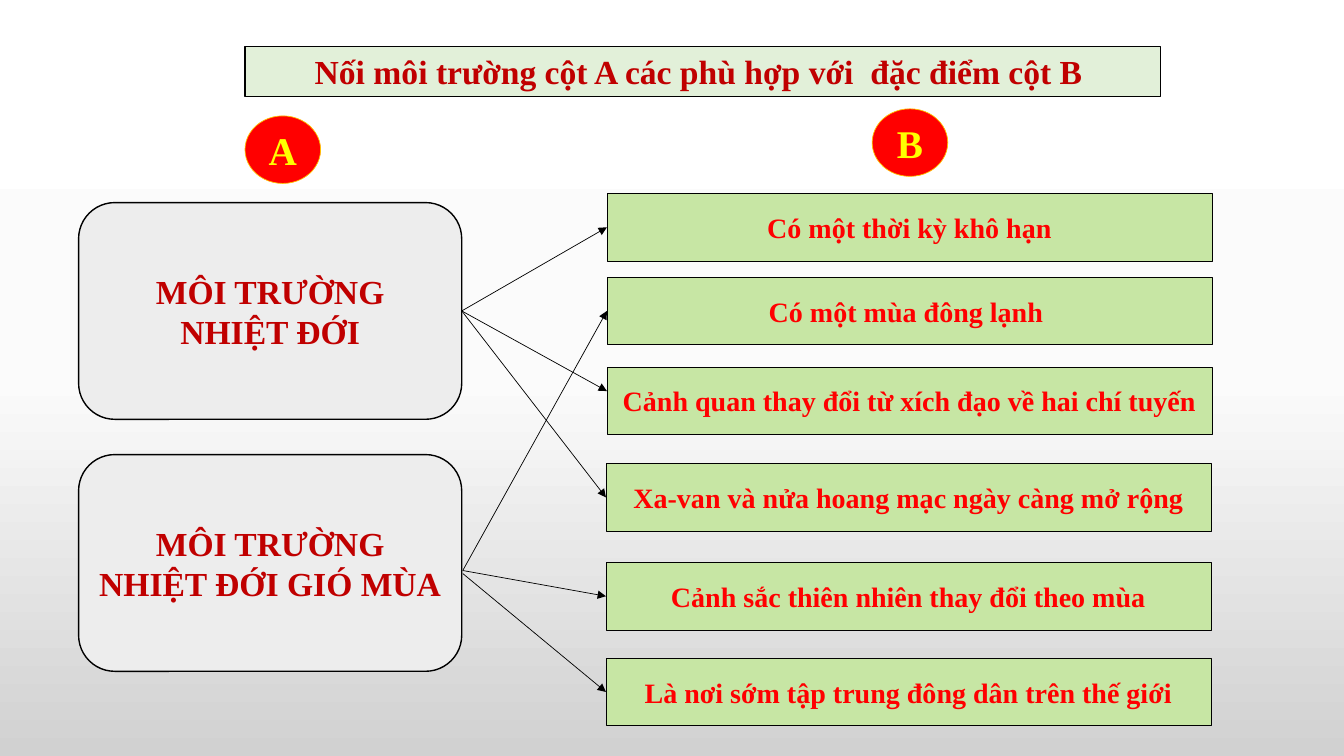
import copy

import pptx
import pptx.dml.color
import pptx.enum.shapes
import pptx.enum.text
import pptx.oxml
import pptx.oxml.ns
import pptx.util

Inches = pptx.util.Inches
Pt = pptx.util.Pt
SHAPE = pptx.enum.shapes.MSO_SHAPE
ANCHOR = pptx.enum.text.MSO_ANCHOR
STRAIGHT = pptx.enum.shapes.MSO_CONNECTOR.STRAIGHT

COLORS = {
    "title": "E2F0D9", "environment": "EDEDED", "feature": "C7E6A4",
    "red": "FF0000", "dark red": "C00000", "yellow": "FFFF00",
    "gold": "FFC000", "black": "000000",
}
BACKGROUND = [(0, "FFFFFF"), (0.5, "FBFBFB"), (1, "D1D1D1")]
RIGHT, LEFT = 3, 1


def rgb(name):
    return pptx.dml.color.RGBColor.from_string(COLORS.get(name, name))


def add_box(kind, place, text, fill, color, size, line="black", width=0.5,
            wrap=False, anchor=ANCHOR.MIDDLE):
    """Add a filled, outlined shape with one centred line of bold text."""
    box = page.shapes.add_shape(kind, *map(Inches, place))
    box.shadow.inherit = False
    box.fill.solid()
    box.fill.fore_color.rgb = rgb(fill)
    box.line.color.rgb = rgb(line)
    box.line.width = Pt(width)
    frame = box.text_frame
    frame.word_wrap = wrap
    frame.vertical_anchor = anchor
    para = frame.paragraphs[0]
    para.alignment = pptx.enum.text.PP_ALIGN.CENTER
    span = para.add_run()
    span.text = text
    style = {"name": "Times New Roman", "size": Pt(size), "bold": True}
    for key, value in style.items():
        setattr(span.font, key, value)
    span.font.color.rgb = rgb(color)
    return box


deck = pptx.Presentation()
deck.slide_width = Inches(13.33)
deck.slide_height = Inches(7.5)
page = deck.slides.add_slide(deck.slide_layouts[6])

# Background gradient, light at the top
backdrop = page.background.fill
backdrop.gradient()
backdrop.gradient_angle = 270
stop_list = page.element.find(".//" + pptx.oxml.ns.qn("a:gsLst"))
stop_list.append(copy.deepcopy(stop_list[-1]))
for stop, (position, color) in zip(backdrop.gradient_stops, BACKGROUND):
    stop.position = position
    stop.color.rgb = rgb(color)

# Title
title = add_box(SHAPE.RECTANGLE, (2.43, 0.46, 9.08, 0.5),
                "Nối môi trường cột A các phù hợp với  đặc điểm cột B ",
                "title", "dark red", 24, width=0.75, wrap=True, anchor=ANCHOR.TOP)
title.text_frame.auto_size = pptx.enum.text.MSO_AUTO_SIZE.SHAPE_TO_FIT_TEXT

# Column A: environments
environments = [
    add_box(SHAPE.ROUNDED_RECTANGLE, (0.78, top, 3.8, 2.15), text,
            "environment", "dark red", 24, width=1, wrap=True)
    for top, text in [(2.01, "MÔI TRƯỜNG NHIỆT ĐỚI"),
                      (4.51, "MÔI TRƯỜNG NHIỆT ĐỚI GIÓ MÙA")]
]

# Column B: features
features = [
    add_box(SHAPE.ACTION_BUTTON_CUSTOM, (left, top, 6, 0.67), text,
            "feature", "red", 20)
    for left, top, text in [
        (6.02, 1.92, "Có một thời kỳ khô hạn"),
        (6.02, 2.75, "Có một mùa đông lạnh "),
        (6.02, 3.64, "Cảnh quan thay đổi từ xích đạo về hai chí tuyến"),
        (6.01, 4.6, "Xa-van và nửa hoang mạc ngày càng mở rộng"),
        (6.01, 5.58, "Cảnh sắc thiên nhiên thay đổi theo mùa"),
        (6.01, 6.53, "Là nơi sớm tập trung đông dân trên thế giới"),
    ]
]

# Column letters
for left, top, letter in [(8.65, 1.08, "B"), (2.43, 1.15, "A")]:
    add_box(SHAPE.OVAL, (left, top, 0.75, 0.67), letter,
            "red", "yellow", 28, line="gold")

# Matching arrows: environment, feature, start and end heights
for source, target, start, end in [
    (0, 0, 3.08, 2.25), (0, 2, 3.08, 3.88), (0, 3, 3.08, 4.93),
    (1, 1, 5.66, 3.08), (1, 4, 5.66, 5.91), (1, 5, 5.69, 6.86),
]:
    arrow = page.shapes.add_connector(
        STRAIGHT, Inches(4.59), Inches(start), features[target].left, Inches(end))
    if source == 0:
        arrow.begin_connect(environments[source], RIGHT)
    if target != 2:
        arrow.end_connect(features[target], LEFT)
    arrow.line.color.rgb = rgb("black")
    arrow.line.width = Pt(0.5)
    outline = arrow.line._get_or_add_ln()
    pptx.oxml.ns.qn("a:tailEnd")
    outline.append(pptx.oxml.parse_xml(
        f'<a:tailEnd {pptx.oxml.ns.nsdecls("a")} type="triangle"/>'))
    arrow.element.spPr.append(pptx.oxml.parse_xml(
        f'<a:effectLst {pptx.oxml.ns.nsdecls("a")}/>'))

deck.save("out.pptx")
